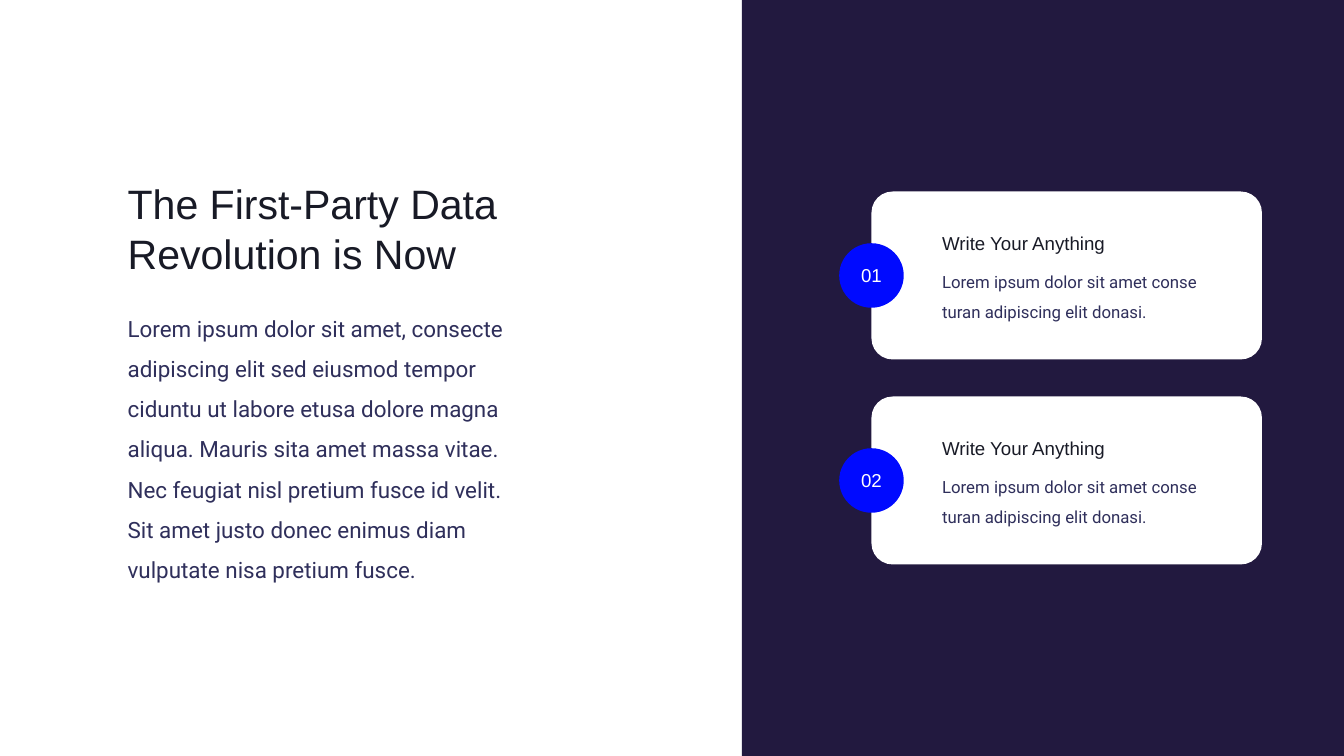
"""Builds a split slide: a statement on the left, numbered cards on the right."""
from dataclasses import dataclass

from lxml.etree import SubElement
from pptx import Presentation
from pptx.dml.color import RGBColor
from pptx.enum.shapes import MSO_SHAPE
from pptx.enum.text import MSO_ANCHOR, MSO_AUTO_SIZE, PP_ALIGN
from pptx.oxml.ns import qn
from pptx.util import Cm, Pt


@dataclass(frozen=True)
class Theme:
    """Colours, fonts and type sizes of the slide."""
    white: str = "FFFFFF"
    panel: str = "22193F"
    accent: str = "000AFF"
    heading: str = "181A26"
    body: str = "2F2F5B"
    heading_font: str = "Arial"
    body_font: str = "Roboto"
    title_size: int = 44
    lead_size: int = 24
    label_size: int = 20
    note_size: int = 18
    body_spacing: float = 1.5


THEME = Theme()
SLIDE_WIDTH, SLIDE_HEIGHT = 50.8, 28.58
PANEL_LEFT = 28.04
LEFT_MARGIN, LEFT_WIDTH = 4.57, 15.01
CARD_LEFT, CARD_TOP = 32.94, 7.24
CARD_WIDTH, CARD_HEIGHT, CARD_GAP = 14.76, 6.35, 1.4
CARD_RADIUS = 0.126
CARD_TEXT_INDENT, CARD_TEXT_WIDTH = 2.42, 11.46
BADGE_SIZE = 2.44

TITLE = "The First-Party Data Revolution is Now"
LEAD = (
    "Lorem ipsum dolor sit amet, consecte adipiscing elit sed eiusmod tempor "
    "ciduntu ut labore etusa dolore magna aliqua. Mauris sita amet massa vitae. "
    "Nec feugiat nisl pretium fusce id velit. Sit amet justo donec enimus diam "
    "vulputate nisa pretium fusce."
)
CARDS = [
    ("Write Your Anything",
     "Lorem ipsum dolor sit amet conse turan adipiscing elit donasi."),
    ("Write Your Anything",
     "Lorem ipsum dolor sit amet conse turan adipiscing elit donasi."),
]


def place(item, left, top, width, height):
    """Moves and sizes a shape, in centimetres."""
    item.left, item.top = Cm(left), Cm(top)
    item.width, item.height = Cm(width), Cm(height)


def write(item, text, font, size, color, align=PP_ALIGN.LEFT, spacing=1.0,
          anchor=MSO_ANCHOR.TOP):
    """Writes one formatted paragraph into a shape."""
    frame = item.text_frame
    frame.text = text
    frame.word_wrap = True
    frame.auto_size = MSO_AUTO_SIZE.NONE
    frame.vertical_anchor = anchor
    paragraph = frame.paragraphs[0]
    paragraph.alignment = align
    paragraph.line_spacing = spacing
    paragraph.space_before = Pt(0)
    run_font = paragraph.runs[0].font
    run_font.name = font
    run_font.size = Pt(size)
    run_font.color.rgb = RGBColor.from_string(color)


def write_heading(item, text, size, color=THEME.heading, **layout):
    """Writes text in the heading font."""
    write(item, text, THEME.heading_font, size, color, **layout)


def write_body(item, text, size):
    """Writes text in the body font with open line spacing."""
    write(item, text, THEME.body_font, size, THEME.body,
          spacing=THEME.body_spacing)


def remove_bullet(paragraph):
    """Turns off the bullet and hanging indent of a paragraph."""
    properties = paragraph._p.get_or_add_pPr()
    properties.set("marL", "0")
    properties.set("indent", "0")
    SubElement(properties, qn("a:buNone"))


def add_block(slide, preset, left, top, width, height, color):
    """Adds a plain filled shape."""
    block = slide.shapes.add_shape(
        preset, Cm(left), Cm(top), Cm(width), Cm(height))
    block.shadow.inherit = False
    block.fill.solid()
    block.fill.fore_color.rgb = RGBColor.from_string(color)
    block.line.fill.background()
    return block


def add_card_text(slide, top, height):
    """Adds an empty text box in the text column of the cards."""
    return slide.shapes.add_textbox(
        Cm(CARD_LEFT + CARD_TEXT_INDENT), Cm(top),
        Cm(CARD_TEXT_WIDTH), Cm(height))


def add_badge(slide, center_x, center_y, number):
    """Adds a numbered circle around a centre point."""
    badge = add_block(
        slide, MSO_SHAPE.OVAL, center_x - BADGE_SIZE / 2,
        center_y - BADGE_SIZE / 2, BADGE_SIZE, BADGE_SIZE, THEME.accent)
    frame = badge.text_frame
    frame.margin_left = frame.margin_right = 0
    frame.margin_top = frame.margin_bottom = 0
    write_heading(badge, f"{number:02d}", THEME.label_size, THEME.white,
                  align=PP_ALIGN.CENTER, anchor=MSO_ANCHOR.MIDDLE)


def add_card(slide, number, label, note):
    """Adds a numbered card with a label and a note."""
    top = CARD_TOP + (number - 1) * (CARD_HEIGHT + CARD_GAP)
    card = add_block(slide, MSO_SHAPE.ROUNDED_RECTANGLE, CARD_LEFT, top,
                     CARD_WIDTH, CARD_HEIGHT, THEME.white)
    card.adjustments[0] = CARD_RADIUS
    write_body(add_card_text(slide, top + 2.51, 2.44), note, THEME.note_size)
    write_heading(add_card_text(slide, top + 1.4, 1.12), label,
                  THEME.label_size)
    add_badge(slide, CARD_LEFT, top + CARD_HEIGHT / 2, number)


def add_statement(slide):
    """Fills the title and body placeholders on the left."""
    title, lead = slide.shapes.title, slide.placeholders[1]
    place(title, LEFT_MARGIN, 6.63, LEFT_WIDTH, 4.01)
    write_heading(title, TITLE, THEME.title_size)
    place(lead, LEFT_MARGIN, 11.26, LEFT_WIDTH, 10.87)
    write_body(lead, LEAD, THEME.lead_size)
    remove_bullet(lead.text_frame.paragraphs[0])


def main():
    """Builds and saves the slide."""
    presentation = Presentation()
    presentation.slide_width = Cm(SLIDE_WIDTH)
    presentation.slide_height = Cm(SLIDE_HEIGHT)
    slide = presentation.slides.add_slide(presentation.slide_layouts[1])
    add_block(slide, MSO_SHAPE.RECTANGLE, PANEL_LEFT, 0,
              SLIDE_WIDTH - PANEL_LEFT, SLIDE_HEIGHT, THEME.panel)
    add_statement(slide)
    for number, (label, note) in enumerate(CARDS, start=1):
        add_card(slide, number, label, note)
    presentation.save("out.pptx")


if __name__ == "__main__":
    main()
